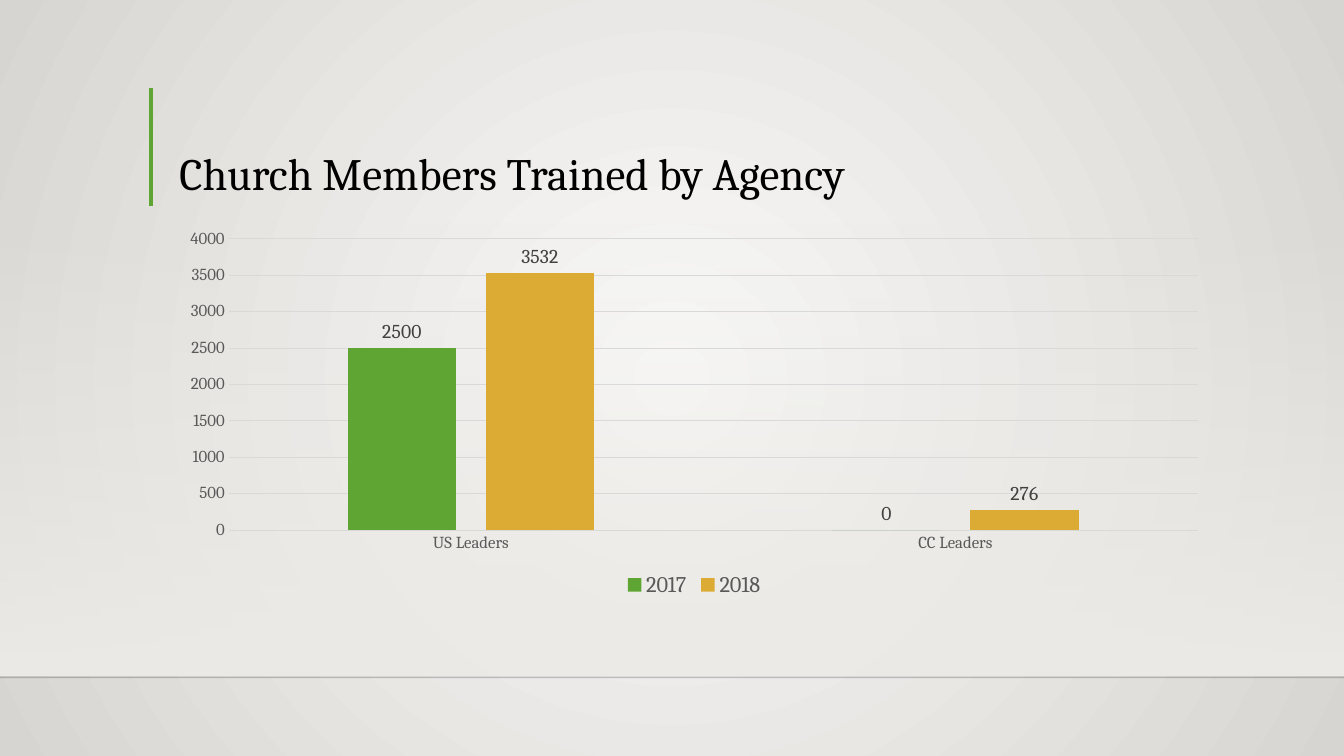
from dataclasses import dataclass

from lxml import etree
from pptx import Presentation
from pptx.chart.data import CategoryChartData
from pptx.dml.color import RGBColor
from pptx.enum.chart import XL_CHART_TYPE, XL_LABEL_POSITION, XL_LEGEND_POSITION, XL_TICK_MARK
from pptx.enum.shapes import MSO_CONNECTOR, MSO_SHAPE
from pptx.enum.text import MSO_ANCHOR
from pptx.oxml.ns import qn
from pptx.util import Cm, Pt

COLUMNS = XL_CHART_TYPE.COLUMN_CLUSTERED
OUTSIDE_END = XL_LABEL_POSITION.OUTSIDE_END
LEGEND_BOTTOM = XL_LEGEND_POSITION.BOTTOM
NO_TICK = XL_TICK_MARK.NONE
STRAIGHT = MSO_CONNECTOR.STRAIGHT
RECTANGLE = MSO_SHAPE.RECTANGLE
ANCHOR_BOTTOM = MSO_ANCHOR.BOTTOM

WIDTH, HEIGHT = 33.87, 19.05
CONTENT_LEFT, CONTENT_WIDTH = 4.27, 26.44
FLOOR_TOP = 17.07


@dataclass(frozen=True)
class Theme:
    """Colours, font and type sizes of the slide."""
    font: str = "Cambria"
    glow: str = "FAFAF9"
    edge: str = "D7D5D2"
    wall: str = "EDEBE7"
    floor: str = "000001"
    title: str = "000000"
    axis: str = "595959"
    label: str = "404040"
    grid: str = "D9D9D9"
    series: tuple = ("5FA534", "DCAB34")
    title_size: int = 32
    legend_size: int = 16
    label_size: int = 14
    axis_size: int = 12
    base_size: int = 10


THEME = Theme()


def style_font(font, size, color):
    """Set the typeface, size and colour of a font."""
    font.name = THEME.font
    font.size = Pt(size)
    font.color.rgb = RGBColor.from_string(color)


def style_line(line, color, width):
    """Give a line its colour and width in points."""
    line.color.rgb = RGBColor.from_string(color)
    line.width = Pt(width)


def set_alpha(color_element, percent):
    """Set the opacity of a colour element."""
    etree.SubElement(color_element, qn("a:alpha")).set("val", str(percent * 1000))


def make_gradient(solid_fill, stops):
    """Replace a solid fill by a gradient of (colour, opacity) stops and return it."""
    gradient = etree.Element(qn("a:gradFill"), rotWithShape="1")
    stop_list = etree.SubElement(gradient, qn("a:gsLst"))
    for position, (color, opacity) in zip((0, 100000), stops):
        stop = etree.SubElement(stop_list, qn("a:gs"), pos=str(position))
        set_alpha(etree.SubElement(stop, qn("a:srgbClr"), val=color), opacity)
    solid_fill.getparent().replace(solid_fill, gradient)
    return gradient


def paint_background(page):
    """Fill the page with a glow that spreads from its centre."""
    page.background.fill.solid()
    solid_fill = page.element.find(".//" + qn("a:solidFill"))
    gradient = make_gradient(solid_fill, ((THEME.glow, 100), (THEME.edge, 100)))
    circle = etree.SubElement(gradient, qn("a:path"), path="circle")
    etree.SubElement(circle, qn("a:fillToRect"), l="50000", t="50000", r="50000", b="50000")


def add_wall(page):
    """Add the panel that fades in downwards to the floor line."""
    wall = page.shapes.add_shape(RECTANGLE, 0, Cm(5.59), Cm(WIDTH), Cm(11.43))
    wall.shadow.inherit = False
    wall.line.fill.background()
    wall.fill.solid()
    solid_fill = wall.element.spPr.find(qn("a:solidFill"))
    gradient = make_gradient(solid_fill, ((THEME.wall, 0), (THEME.wall, 100)))
    etree.SubElement(gradient, qn("a:lin"), ang="5400000", scaled="0")


def add_rule(page, start, end, color, width, opacity=100):
    """Add a straight line between two points given in centimetres."""
    rule = page.shapes.add_connector(STRAIGHT, *(Cm(value) for value in start + end))
    style_line(rule.line, color, width)
    if opacity < 100:
        set_alpha(rule.element.spPr.find(".//" + qn("a:srgbClr")), opacity)
    etree.SubElement(rule.element.spPr, qn("a:effectLst"))


def add_title(page, text):
    """Add the slide title, set on the bottom of its box."""
    box = page.shapes.add_textbox(Cm(CONTENT_LEFT), Cm(2.24), Cm(CONTENT_WIDTH), Cm(2.92))
    frame = box.text_frame
    frame.word_wrap = True
    frame.vertical_anchor = ANCHOR_BOTTOM
    para = frame.paragraphs[0]
    para.text = text
    para.line_spacing = 0.9
    style_font(para.font, THEME.title_size, THEME.title)


def style_axes(chart):
    """Style both axes and the horizontal grid."""
    for axis in (chart.category_axis, chart.value_axis):
        axis.major_tick_mark = axis.minor_tick_mark = NO_TICK
        style_font(axis.tick_labels.font, THEME.axis_size, THEME.axis)
    style_line(chart.category_axis.format.line, THEME.grid, 0.75)
    values = chart.value_axis
    values.minimum_scale, values.maximum_scale, values.major_unit = 0, 4000, 500
    values.format.line.fill.background()
    values.has_major_gridlines = True
    style_line(values.major_gridlines.format.line, THEME.grid, 0.75)


def style_series(series, color):
    """Colour the columns of a series and show their values."""
    series.format.fill.solid()
    series.format.fill.fore_color.rgb = RGBColor.from_string(color)
    series.invert_if_negative = False
    labels = series.data_labels
    labels.show_value = True
    labels.position = OUTSIDE_END
    style_font(labels.font, THEME.label_size, THEME.label)


def add_column_chart(page, categories, values_by_year):
    """Add the clustered columns with one series for each year."""
    data = CategoryChartData()
    data.categories = categories
    for year, values in values_by_year.items():
        data.add_series(year, values)
    frame = page.shapes.add_chart(
        COLUMNS, Cm(CONTENT_LEFT), Cm(5.59), Cm(CONTENT_WIDTH), Cm(9.58), data)
    chart = frame.chart
    chart.has_title = False
    style_font(chart.font, THEME.base_size, THEME.title)
    style_axes(chart)
    plot = chart.plots[0]
    plot.gap_width, plot.overlap = 219, -27
    plot.vary_by_categories = False
    for series, color in zip(plot.series, THEME.series):
        style_series(series, color)
    chart.has_legend = True
    chart.legend.position = LEGEND_BOTTOM
    chart.legend.include_in_layout = False
    style_font(chart.legend.font, THEME.legend_size, THEME.axis)


def main():
    """Build the slide and save the deck."""
    deck = Presentation()
    deck.slide_width, deck.slide_height = Cm(WIDTH), Cm(HEIGHT)
    page = deck.slides.add_slide(deck.slide_layouts[6])
    paint_background(page)
    add_wall(page)
    add_rule(page, (0, FLOOR_TOP), (WIDTH, FLOOR_TOP), THEME.floor, 1, opacity=20)
    add_rule(page, (3.81, 2.21), (3.81, 5.18), THEME.series[0], 3)
    add_title(page, "Church Members Trained by Agency")
    add_column_chart(page, ("US Leaders", "CC Leaders"),
                     {"2017": (2500, 0), "2018": (3532, 276)})
    deck.save("out.pptx")


if __name__ == "__main__":
    main()
